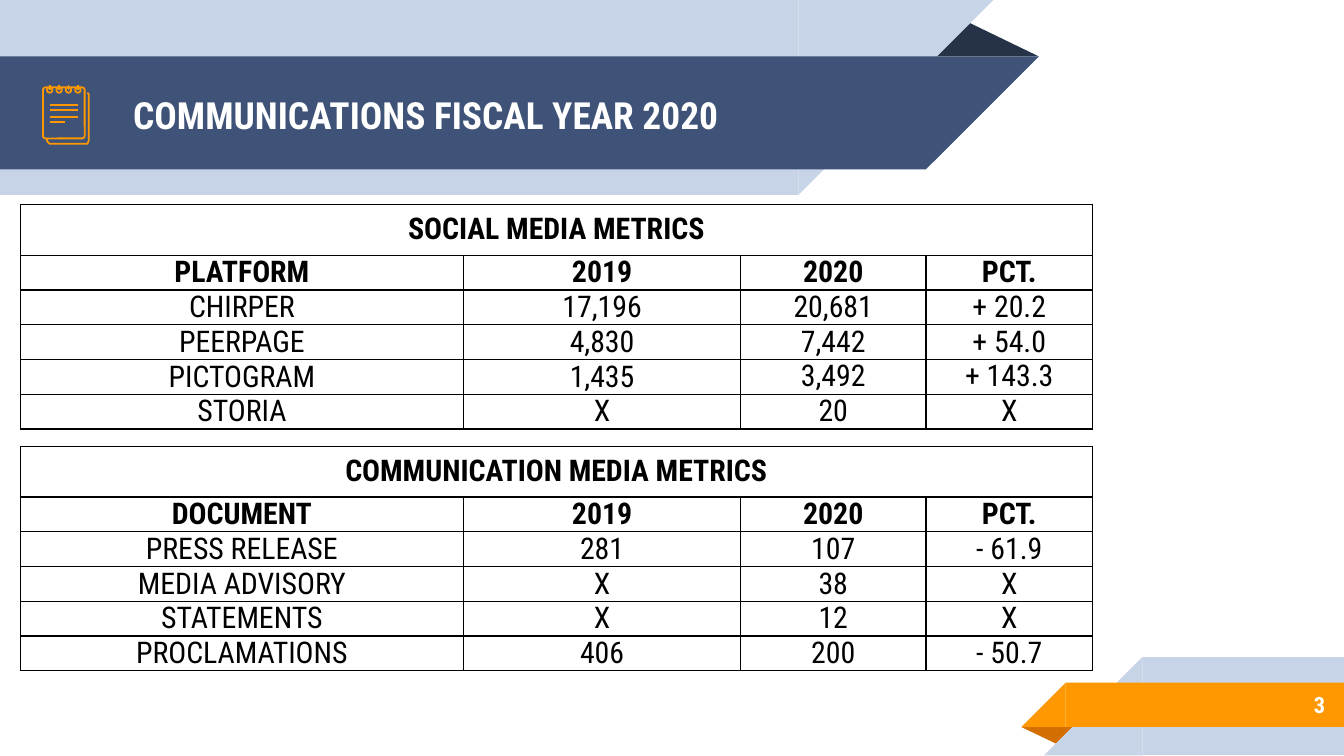
import pptx
import pptx.dml.color
import pptx.enum.shapes
import pptx.enum.text
import pptx.oxml.ns
import pptx.util
from lxml import etree

Inches = pptx.util.Inches
Pt = pptx.util.Pt
qn = pptx.oxml.ns.qn
SHAPE = pptx.enum.shapes.MSO_SHAPE
ANCHOR = pptx.enum.text.MSO_ANCHOR
ALIGN = pptx.enum.text.PP_ALIGN

COLORS = {
    "pale": "C7D3E6", "navy": "3F5378", "midnight": "263248", "orange": "FF9800",
    "rust": "D26F00", "white": "FFFFFF", "black": "000000",
}
FONT = "Roboto Condensed"
TITLE = "COMMUNICATIONS FISCAL YEAR 2020"
PAGE_NUMBER = "3"

TABLES = [
    (1.52, [
        ("SOCIAL MEDIA METRICS", "", "", ""),
        ("PLATFORM", "2019", "2020", "PCT."),
        ("CHIRPER", "17,196", "20,681", "+ 20.2"),
        ("PEERPAGE", "4,830", "7,442", "+ 54.0"),
        ("PICTOGRAM", "1,435", "3,492", "+ 143.3"),
        ("STORIA", "X", "20", "X"),
    ]),
    (3.32, [
        ("COMMUNICATION MEDIA METRICS", "", "", ""),
        ("DOCUMENT", "2019", "2020", "PCT."),
        ("PRESS RELEASE", "281", "107", "- 61.9"),
        ("MEDIA ADVISORY", "X", "38", "X"),
        ("STATEMENTS", "X", "12", "X"),
        ("PROCLAMATIONS", "406", "200", "- 50.7"),
    ]),
]
TABLE_LEFT = 0.15
COLUMN_WIDTHS = [3.3, 2.06, 1.38, 1.24]
HEADING_HEIGHT, ROW_HEIGHT = 0.35, 0.24

RIBBONS = [
    ("triangle", "midnight", (6.88, 0.14, 0.85, 0.28), 0, False),
    ("rectangle", "pale", (0, 0, 5.94, 1.45), 0, False),
    ("corner", "pale", (5.94, 0, 1.45, 1.45), 180, True),
    ("rectangle", "navy", (0, 0.42, 6.89, 0.84), 0, False),
    ("corner", "navy", (6.89, 0.42, 0.84, 0.84), 180, True),
    ("triangle", "rust", (7.6, 5.41, 0.43, 0.14), 180, False),
    ("rectangle", "pale", (8.5, 4.89, 1.5, 0.73), 0, False),
    ("corner", "pale", (7.77, 4.89, 0.73, 0.73), 0, True),
    ("rectangle", "orange", (7.93, 5.08, 2.07, 0.33), 0, False),
    ("corner", "orange", (7.6, 5.08, 0.33, 0.33), 0, True),
]
PRESETS = {
    "triangle": SHAPE.ISOSCELES_TRIANGLE,
    "rectangle": SHAPE.RECTANGLE,
    "corner": SHAPE.RIGHT_TRIANGLE,
}

BACK_SHEET = [(0.35, 1.03), (0.35, 1.05), (0.37, 1.07), (0.65, 1.07),
              (0.66, 1.05), (0.66, 0.7), (0.65, 0.69)]
RING_COUNT, RING_STEP = 4, 0.07
NOTE_LINES = [(0.78, 0.21), (0.82, 0.21), (0.87, 0.21), (0.91, 0.11)]


def rgb(name):
    return pptx.dml.color.RGBColor.from_string(COLORS[name])


def assign(target, values):
    for name, value in values.items():
        setattr(target, name, value)


def write(frame, text, size, color, bold, align):
    para = frame.paragraphs[0]
    para.alignment = align
    span = para.add_run()
    span.text = text
    assign(span.font, {"name": FONT, "size": Pt(size), "bold": bold})
    span.font.color.rgb = rgb(color)


def fill_box(box, area, text, size, align):
    assign(box, dict(zip(("left", "top", "width", "height"), map(Inches, area))))
    frame = box.text_frame
    sides = ("margin_left", "margin_top", "margin_right", "margin_bottom")
    assign(frame, {side: Inches(0.1) for side in sides})
    assign(frame, {"word_wrap": True, "vertical_anchor": ANCHOR.MIDDLE,
                   "auto_size": pptx.enum.text.MSO_AUTO_SIZE.NONE})
    write(frame, text, size, "white", True, align)


def add_ribbon(page, kind, color, area, rotation, flipped):
    shape = page.shapes.add_shape(PRESETS[kind], *map(Inches, area))
    shape.shadow.inherit = False
    shape.fill.solid()
    shape.fill.fore_color.rgb = rgb(color)
    shape.line.fill.background()
    shape.rotation = rotation
    if flipped:
        shape._element.spPr.xfrm.set("flipH", "1")
    if kind == "triangle":
        shape.adjustments[0] = 0.32


def outline(shape):
    shape.line.color.rgb = rgb("orange")
    shape.line.width = Pt(0.96)


def make_hollow(shape):
    shape.shadow.inherit = False
    shape.fill.background()
    outline(shape)


def add_outline_shape(page, preset, area):
    shape = page.shapes.add_shape(preset, *map(Inches, area))
    make_hollow(shape)
    return shape


def add_stroke(page, *ends):
    stroke = page.shapes.add_connector(
        pptx.enum.shapes.MSO_CONNECTOR.STRAIGHT, *map(Inches, ends))
    outline(stroke)
    etree.SubElement(stroke._element.spPr, qn("a:effectLst"))


def add_notepad(page):
    start, *corners = [(Inches(x), Inches(y)) for x, y in BACK_SHEET]
    builder = page.shapes.build_freeform(*start)
    builder.add_line_segments(corners, close=False)
    make_hollow(builder.convert_to_shape())
    front = add_outline_shape(page, SHAPE.ROUNDED_RECTANGLE, (0.32, 0.65, 0.31, 0.38))
    front.adjustments[0] = 0.06
    for index in range(RING_COUNT):
        shift = index * RING_STEP
        add_outline_shape(page, SHAPE.OVAL, (0.35 + shift, 0.65, 0.04, 0.04))
        add_stroke(page, 0.37 + shift, 0.63, 0.37 + shift, 0.67)
    for top, length in NOTE_LINES:
        add_stroke(page, 0.37, top, 0.37 + length, top)


def add_borders(cell):
    properties = cell._tc.get_or_add_tcPr()
    for side in ("lnL", "lnR", "lnT", "lnB"):
        border = etree.SubElement(properties, qn("a:" + side), w=str(Pt(0.75)))
        solid = etree.SubElement(border, qn("a:solidFill"))
        etree.SubElement(solid, qn("a:srgbClr"), val=COLORS["black"])


def add_metrics(page, top, rows):
    heights = [HEADING_HEIGHT] + [ROW_HEIGHT] * (len(rows) - 1)
    area = (TABLE_LEFT, top, sum(COLUMN_WIDTHS), sum(heights))
    table = page.shapes.add_table(
        len(rows), len(COLUMN_WIDTHS), *map(Inches, area)).table
    assign(table, {"first_row": False, "horz_banding": False})
    for column, width in zip(table.columns, COLUMN_WIDTHS):
        column.width = Inches(width)
    for row_index, values in enumerate(rows):
        table.rows[row_index].height = Inches(heights[row_index])
        for column_index, text in enumerate(values):
            cell = table.cell(row_index, column_index)
            side = Inches(0.08 if column_index < 2 else 0)
            edge = Inches(0.06 if row_index == 0 else 0)
            assign(cell, {
                "margin_left": side, "margin_right": side,
                "margin_top": edge, "margin_bottom": edge,
                "vertical_anchor": ANCHOR.BOTTOM if column_index < 2 else ANCHOR.TOP,
            })
            add_borders(cell)
            cell.fill.background()
            if text:
                write(cell.text_frame, text, 16, "black", row_index < 2, ALIGN.CENTER)
    table.cell(0, 0).merge(table.cell(0, len(COLUMN_WIDTHS) - 1))


def main():
    deck = pptx.Presentation()
    assign(deck, {"slide_width": Inches(10), "slide_height": Inches(10) * 9 // 16})
    page = deck.slides.add_slide(deck.slide_layouts[5])
    for ribbon in RIBBONS:
        add_ribbon(page, *ribbon)
    title = page.shapes.title
    page.shapes._spTree.append(title._element)
    fill_box(title, (0.89, 0.43, 5.75, 0.84), TITLE, 20, ALIGN.LEFT)
    number = page.shapes.add_textbox(0, 0, 0, 0)
    fill_box(number, (8.33, 5.07, 1.63, 0.35), PAGE_NUMBER, 12, ALIGN.RIGHT)
    add_notepad(page)
    for top, rows in TABLES:
        add_metrics(page, top, rows)
    deck.save("out.pptx")


if __name__ == "__main__":
    main()
